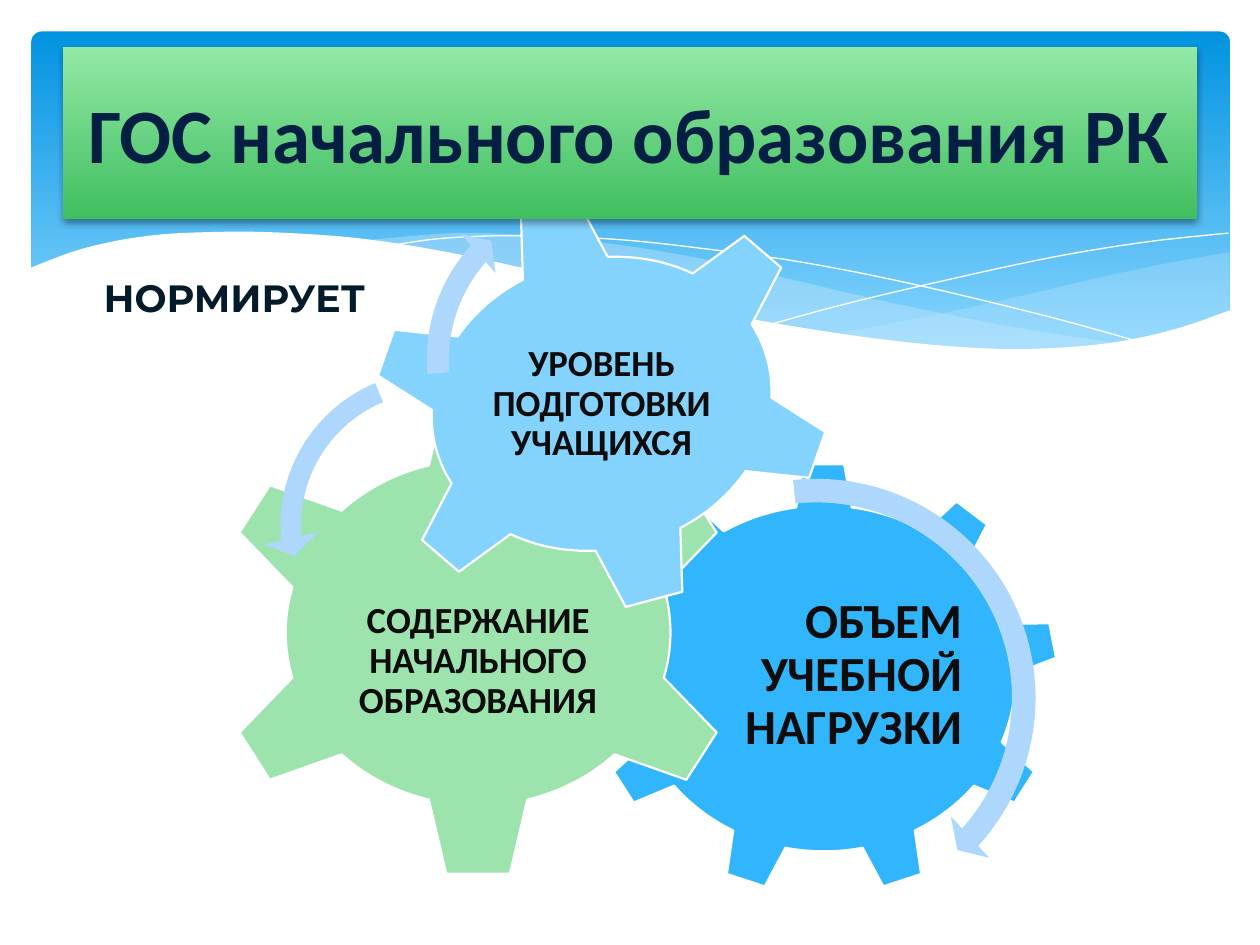
from lxml.etree import SubElement as Sub
from pptx import Presentation
from pptx.dml.color import RGBColor as Rgb
from pptx.enum.shapes import MSO_SHAPE as Kind
from pptx.enum.text import MSO_ANCHOR as Anchor, MSO_AUTO_SIZE as Size, PP_ALIGN as Align
from pptx.oxml.ns import qn
from pptx.util import Inches, Pt

HUE = {
    "white": "FFFFFF", "haze": "C6E7FC", "deep": "0293E0", "sky": "83D3FE",
    "blue": "31B6FD", "mint": "9DE3AE", "arrow": "AED7FE", "leaf": "92E8A6",
    "grass": "41BF60", "navy": "041F44", "ink": "021B2B", "text": "0D0D0D",
    "black": "000000",
}


def curve(points, steps=6):
    ends = [points[0], *points, points[-1]]
    out = [points[0]]
    for a, b, c, d in zip(ends, ends[1:], ends[2:], ends[3:]):
        for i in range(1, steps + 1):
            t = i / steps
            out.append(tuple(
                q + t * (r - p) / 2 + t**2 * (2 * p - 5 * q + 4 * r - s) / 2
                + t**3 * (3 * q - p - 3 * r + s) / 2
                for p, q, r, s in zip(a, b, c, d)))
    return out


class Deck:
    font = "Calibri"

    def __init__(self):
        self.file = Presentation()
        self.file.slide_width, self.file.slide_height = Inches(10), Inches(7.5)
        self.slide = self.file.slides.add_slide(self.file.slide_layouts[1])
        self.shapes = self.slide.shapes

    def color(self, name):
        return Rgb.from_string(HUE[name])

    def paint(self, shape, fill=None, line=None, width=1.25):
        shape.shadow.inherit = False
        if fill:
            shape.fill.solid()
            shape.fill.fore_color.rgb = self.color(fill)
        else:
            shape.fill.background()
        if line:
            shape.line.color.rgb = self.color(line)
            shape.line.width = Pt(width)
        else:
            shape.line.fill.background()

    def fade(self, shape, top, low, end=1):
        shape.fill.gradient()
        shape.fill.gradient_angle = 270
        for stop, name, spot in zip(shape.fill.gradient_stops, (top, low), (0, end)):
            stop.color.rgb = self.color(name)
            stop.position = spot

    def form(self, kind, box, fill, line=None, turn=0, adjust=()):
        shape = self.shapes.add_shape(kind, *map(Inches, box))
        self.paint(shape, fill, line)
        shape.rotation = turn
        for i, value in enumerate(adjust):
            shape.adjustments[i] = value
        return shape

    def wave(self, points, fill=None, alpha=100):
        spots = [(Inches(x), Inches(y)) for x, y in points]
        pen = self.shapes.build_freeform(*spots[0])
        pen.add_line_segments(spots[1:], close=bool(fill))
        shape = pen.convert_to_shape()
        self.paint(shape, fill, None if fill else "white", 0)
        if alpha < 100:
            tint = shape.element.spPr.find(qn("a:solidFill"))[0]
            Sub(tint, qn("a:alpha"), val=str(alpha * 1000))

    def words(self, shape, text, size, color, align=Align.CENTER, font=None):
        para = shape.text_frame.paragraphs[0]
        para.text = text
        para.alignment = align
        para.font.name = font or self.font
        para.font.size = Pt(size)
        para.font.bold = True
        para.font.color.rgb = self.color(color)
        return para

    def label(self, box, text, size, align=Align.CENTER, pad=0.03, drop=0):
        shape = self.shapes.add_textbox(*map(Inches, box))
        frame = shape.text_frame
        frame.word_wrap = True
        frame.vertical_anchor = Anchor.MIDDLE
        frame.margin_left = frame.margin_right = frame.margin_bottom = Inches(pad)
        frame.margin_top = Inches(pad + drop)
        self.words(shape, text, size, "text", align).line_spacing = 0.9

    def place(self, shape, box):
        shape.left, shape.top, shape.width, shape.height = map(Inches, box)
        shape.text_frame.auto_size = Size.NONE
        self.shapes.element.append(shape.element)

    def title(self, box, text):
        shape = self.shapes.title
        self.place(shape, box)
        self.fade(shape, "leaf", "grass")
        glow = Sub(Sub(shape.element.spPr, qn("a:effectLst")), qn("a:outerShdw"),
                   blurRad=str(Pt(4)), dist=str(Pt(2)), dir="5400000", rotWithShape="0")
        Sub(Sub(glow, qn("a:srgbClr"), val=HUE["black"]), qn("a:alpha"), val="38000")
        shape.text_frame.vertical_anchor = Anchor.MIDDLE
        self.words(shape, text, 44, "navy")

    def body(self, box, text):
        shape = self.slide.placeholders[1]
        self.place(shape, box)
        shape.text_frame.margin_top = Inches(0.4)
        para = self.words(shape, text, 21.7, "ink", font="Montserrat")
        para.space_before = Pt(0)
        props = shape.element.find(".//" + qn("a:pPr"))
        props.set("marL", "0")
        props.set("indent", "0")
        props.find(qn("a:defRPr")).addprevious(Sub(props, qn("a:buNone")))


def waves(deck):
    panel = deck.form(Kind.ROUNDED_RECTANGLE, (0.25, 0.25, 9.51, 2.7), "deep", adjust=[0.03])
    deck.fade(panel, "deep", "sky", 0.9)
    right = [(6.61, 2.65), (7.05, 2.71), (7.57, 2.76), (8.03, 2.78), (8.54, 2.76),
             (8.97, 2.7), (9.35, 2.62), (9.76, 2.47)]
    deck.wave(curve([(9.76, 2), (9.21, 2.1), (8.61, 2.23), (7.79, 2.42), (7.06, 2.57),
                     (6.61, 2.65)]) + curve(right), "haze", 29)
    upper = [(8.93, 2.73), (8.07, 2.6), (7.06, 2.4), (6.29, 2.22), (5.55, 2.05),
             (4.89, 1.94), (4.2, 1.87), (3.61, 1.85), (2.86, 1.91)]
    lower = [(2.86, 1.91), (3.62, 2.03), (4.49, 2.22), (5.3, 2.4), (6.01, 2.55),
             (6.8, 2.68), (7.48, 2.76), (8.18, 2.78), (8.93, 2.73)]
    deck.wave(curve(upper) + curve(lower), "haze", 40)
    deck.wave(curve([(3.09, 1.95), (3.53, 1.89), (4.16, 1.87), (4.89, 1.9), (5.56, 1.97),
                     (6.36, 2.08), (7.27, 2.26), (8.31, 2.51), (9.07, 2.72)]))
    deck.wave(curve([(6.13, 2.57), (6.72, 2.41), (7.48, 2.23), (8.36, 2.04),
                     (9.1, 1.92), (9.75, 1.85)]))
    crest = [(9.77, 2.46), (9.3, 2.62), (8.75, 2.73), (8.09, 2.77), (7.44, 2.74),
             (6.68, 2.65), (5.79, 2.5), (5.03, 2.33), (4.47, 2.2), (3.65, 2.02),
             (2.92, 1.9), (2.3, 1.85), (1.77, 1.84), (1.19, 1.87), (0.67, 1.97),
             (0.23, 2.13)]
    deck.wave(curve(crest) + [(0.23, 3.29), (9.77, 3.29)], "white")


def gears(deck):
    deck.form(Kind.GEAR_9, (4.68, 3.67, 3.72, 3.43), "blue", "white")
    deck.label((5.41, 4.48, 2.27, 1.77), "ОБЪЕМ УЧЕБНОЙ НАГРУЗКИ", 28, Align.RIGHT, 0.04)
    deck.form(Kind.GEAR_6, (1.68, 3.06, 4.23, 3.92), "mint", "white")
    deck.label((2.71, 4.06, 2.17, 1.93), "СОДЕРЖАНИЕ НАЧАЛЬНОГО ОБРАЗОВАНИЯ", 21, drop=0.45)
    deck.form(Kind.GEAR_6, (2.92, 1.56, 3.71, 3.29), "sky", "white", 345)
    deck.label((3.76, 2.26, 2.03, 1.9), "УРОВЕНЬ ПОДГОТОВКИ УЧАЩИХСЯ", 21)
    for kind, left, top, side, adjust in (
        (Kind.CIRCULAR_ARROW, 4.61, 3.67, 3.74, (0.05, 2.99, 25.3, 158.32, 0.06)),
        (Kind.LEFT_CIRCULAR_ARROW, 2.09, 2.81, 2.72, (0.06, 4.3, 104.89, 148.38, 0.08)),
        (Kind.CIRCULAR_ARROW, 3.27, 1.39, 2.93, (0.06, 3.94, 133.14, 105.08, 0.07)),
    ):
        deck.form(kind, (left, top, side, side), "arrow", adjust=adjust)


def main():
    deck = Deck()
    waves(deck)
    gears(deck)
    deck.title((0.5, 0.37, 9, 1.37), "ГОС начального образования РК")
    deck.body((-0.35, 1.78, 4.42, 0.72), "НОРМИРУЕТ")
    deck.file.save("out.pptx")


if __name__ == "__main__":
    main()
